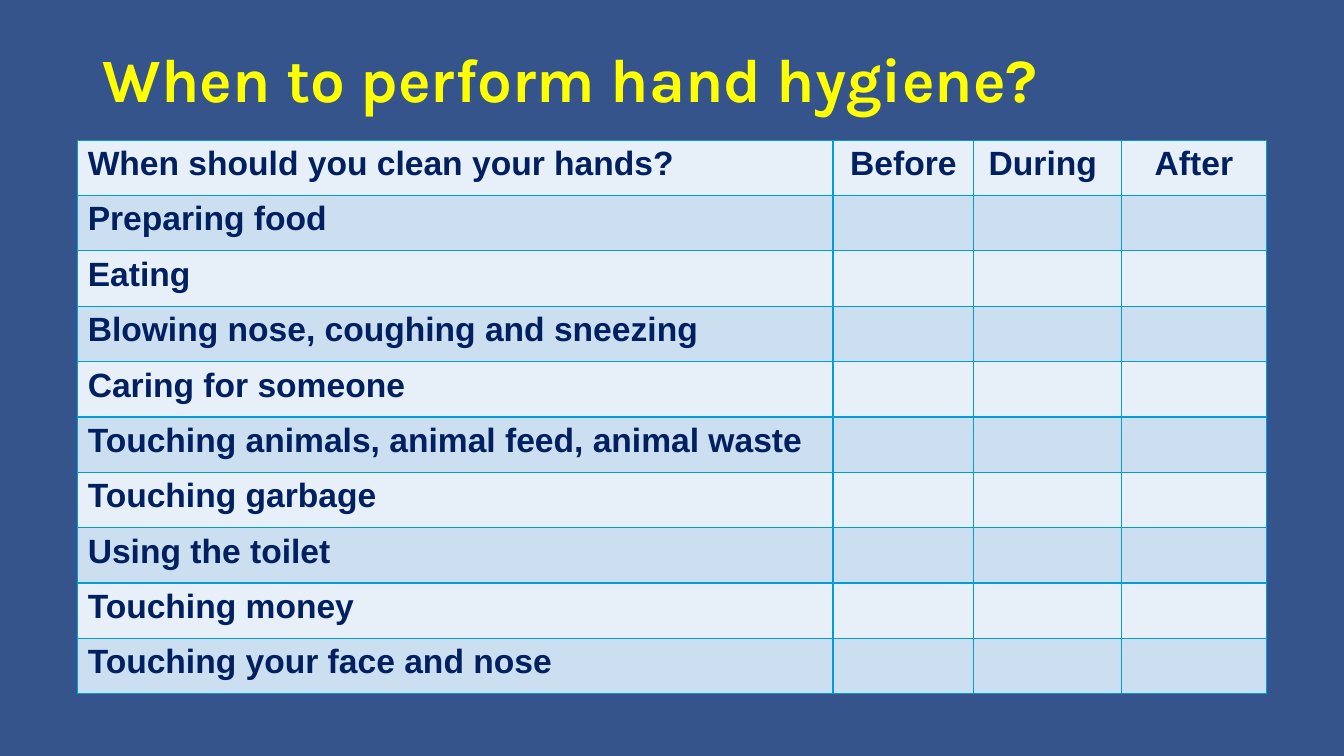
import pptx
import pptx.dml.color
import pptx.enum.text
import pptx.oxml
import pptx.util
from pptx.oxml.ns import nsdecls

Pt = pptx.util.Pt
RGBColor = pptx.dml.color.RGBColor
PP_ALIGN = pptx.enum.text.PP_ALIGN
MSO_ANCHOR = pptx.enum.text.MSO_ANCHOR

# Content
TITLE = "When to perform hand hygiene?"
HEADER = ["When should you clean your hands?", "Before", "During ", "After"]
ACTIVITIES = [
    "Preparing food",
    "Eating",
    "Blowing nose, coughing and sneezing",
    "Caring for someone",
    "Touching animals, animal feed, animal waste",
    "Touching garbage",
    "Using the toilet",
    "Touching money",
    "Touching your face and nose",
]

# Colours and formats
BACKGROUND = RGBColor(0x36, 0x54, 0x8C)
YELLOW = RGBColor(0xFF, 0xFF, 0x00)
NAVY = RGBColor(0x00, 0x20, 0x60)
BORDER = RGBColor(0x00, 0x9D, 0xD9)
BANDS = [RGBColor(0xE7, 0xEF, 0xF8), RGBColor(0xCC, 0xDF, 0xF1)]
TITLE_FONT = {"name": "Karla", "size": Pt(44), "bold": True}
CELL_FONT = {"name": "Arial", "size": Pt(24), "bold": True}

# Layout in points
SLIDE_W, SLIDE_H = 960, 540
TITLE_BOX = (66.24, 31.7, 828, 104.4)
TABLE_LEFT, TABLE_TOP = 55.5, 100.1
COL_WIDTHS = [539.5, 100.5, 105.5, 103.7]
ROW_H = 39.55


def set_font(font, values, color):
    for name, value in values.items():
        setattr(font, name, value)
    font.color.rgb = color


def add_borders(cell):
    tc_pr = cell._tc.get_or_add_tcPr()
    for i, side in enumerate(("lnL", "lnR", "lnT", "lnB")):
        tc_pr.insert(i, pptx.oxml.parse_xml(
            f'<a:{side} {nsdecls("a")} w="{Pt(1)}"><a:solidFill>'
            f'<a:srgbClr val="{BORDER}"/></a:solidFill></a:{side}>'))


prs = pptx.Presentation()
prs.slide_width, prs.slide_height = Pt(SLIDE_W), Pt(SLIDE_H)
s = prs.slides.add_slide(prs.slide_layouts[5])
s.background.fill.solid()
s.background.fill.fore_color.rgb = BACKGROUND

# Title
sp = s.shapes.title
sp.left, sp.top, sp.width, sp.height = map(Pt, TITLE_BOX)
tf = sp.text_frame
tf.text = TITLE
tf.word_wrap = True
tf.auto_size = pptx.enum.text.MSO_AUTO_SIZE.NONE
tf.vertical_anchor = MSO_ANCHOR.TOP
p = tf.paragraphs[0]
p.alignment = PP_ALIGN.LEFT
p.line_spacing = 0.9
set_font(p.runs[0].font, TITLE_FONT, YELLOW)

# Table with alternating bands
rows = [HEADER] + [[name, "", "", ""] for name in ACTIVITIES]
table = s.shapes.add_table(
    len(rows), len(HEADER), Pt(TABLE_LEFT), Pt(TABLE_TOP),
    Pt(sum(COL_WIDTHS)), Pt(ROW_H * len(rows))).table
for column, width in zip(table.columns, COL_WIDTHS):
    column.width = Pt(width)
for i, row in enumerate(rows):
    table.rows[i].height = Pt(ROW_H)
    for j, text in enumerate(row):
        cell = table.cell(i, j)
        cell.fill.solid()
        cell.fill.fore_color.rgb = BANDS[i % 2]
        add_borders(cell)
        p = cell.text_frame.paragraphs[0]
        p.alignment = PP_ALIGN.CENTER if j else PP_ALIGN.LEFT
        if text:
            r = p.add_run()
            r.text = text
            set_font(r.font, CELL_FONT, NAVY)

prs.save("out.pptx")
